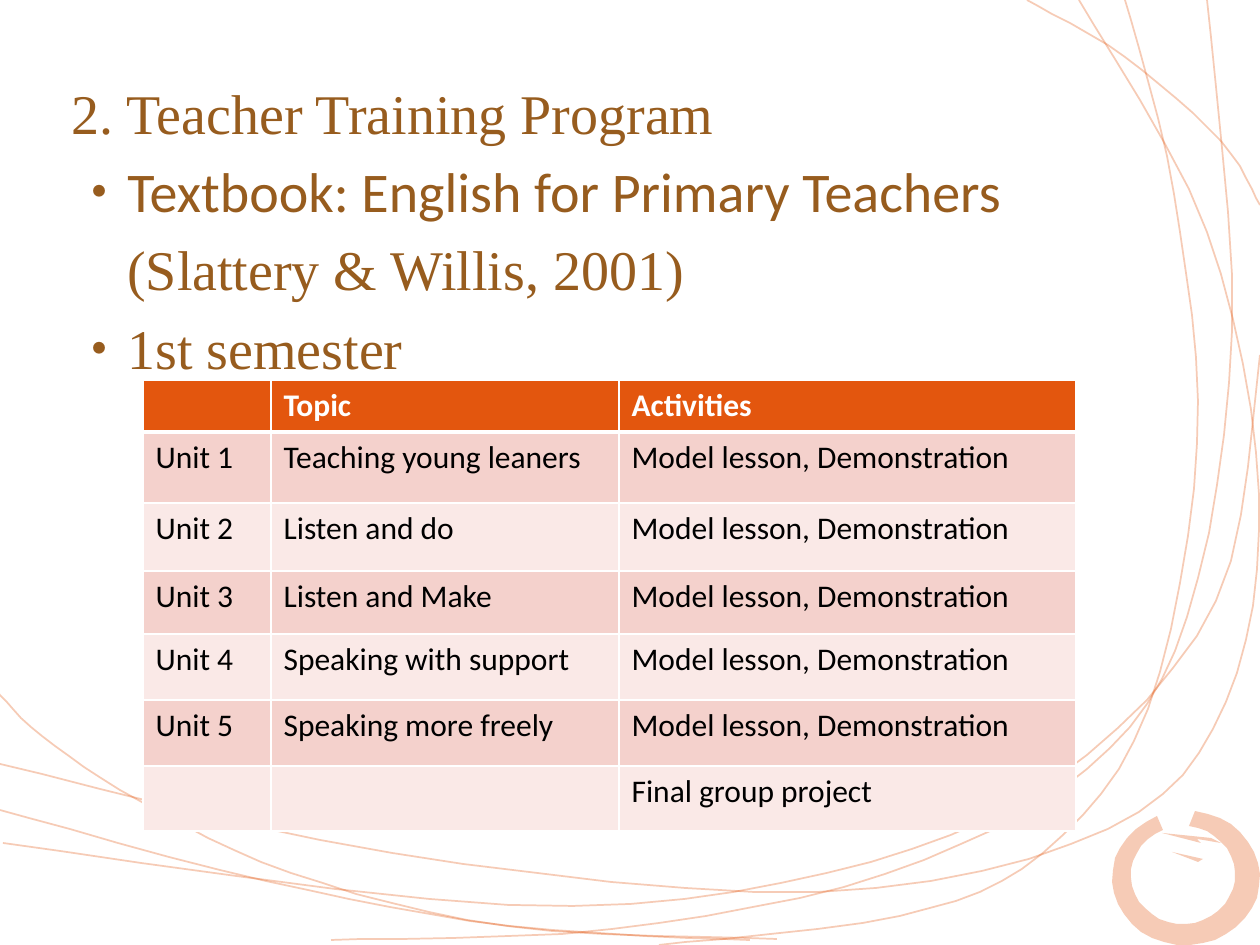
from math import cos, radians, sin

from lxml import etree
from pptx import Presentation
from pptx.dml.color import RGBColor
from pptx.oxml.ns import qn
from pptx.util import Emu, Pt

SCALE = 914400 / 126
COLORS = {
    "accent": "E3560E", "brown": "975C1E", "white": "FFFFFF", "black": "000000",
    "band_dark": "F4D1CC", "band_light": "FAE9E7",
}
CURVE_KNOTS = [
    [(-4, 690), (42, 736), (140, 801), (291, 873), (507, 926), (777, 939)],
    [(659, 945), (900, 916), (1043, 853), (1148, 709), (1197, 444), (1174, 194), (1125, 0)],
    [(0, 764), (392, 853), (818, 892), (1108, 829), (1226, 702), (1259, 493),
     (1207, 232), (1079, 0)],
    [(3, 843), (508, 905), (827, 873), (1055, 779), (1216, 601), (1260, 355)],
    [(331, 940), (612, 929), (885, 874), (1087, 769), (1187, 617), (1232, 331), (1207, 0)],
    [(1027, 0), (1125, 57), (1221, 141), (1260, 205)],
    [(0, 810), (266, 881), (510, 926), (750, 940)],
]
BRUSH_FLECKS = [
    [(1162, 833), (1211, 838), (1221, 843), (1197, 839), (1201, 843)],
    [(1172, 852), (1203, 859), (1198, 862)],
]
HEADING_LINES = [
    ("2. Teacher Training Program", "Times New Roman", 0),
    ("・Textbook: English for Primary Teachers", "Calibri", 0),
    ("(Slattery & Willis, 2001)", "Times New Roman", 56),
    ("・1st semester", "Times New Roman", 0),
]
LESSON = "Model lesson, Demonstration"
SYLLABUS = [
    ("", "Topic", "Activities"),
    ("Unit 1", "Teaching young leaners", LESSON),
    ("Unit 2", "Listen and do", LESSON),
    ("Unit 3", "Listen and Make", LESSON),
    ("Unit 4", "Speaking with support", LESSON),
    ("Unit 5", "Speaking more freely", LESSON),
    ("", "", "Final group project"),
]
COLUMN_WIDTHS = [128, 348, 457]
ROW_HEIGHTS = [52, 71, 68, 63, 66, 66, 65]


def px(length):
    return Emu(round(length * SCALE))


def color(name):
    return RGBColor.from_string(COLORS[name])


def set_alpha(fill_parent, percent):
    for color_element in fill_parent.iter(qn("a:srgbClr")):
        etree.SubElement(color_element, qn("a:alpha"), val=str(percent * 1000))


def smooth_points(knots, steps=6):
    """Pass a Catmull-Rom spline through the knots."""
    padded = [knots[0], *knots, knots[-1]]
    points = [knots[0]]
    for before, start, end, after in zip(padded, padded[1:], padded[2:], padded[3:]):
        for step in range(1, steps + 1):
            t = step / steps
            points.append(tuple(
                b + t * ((c - a) + t * ((2 * a - 5 * b + 4 * c - d)
                                        + t * (3 * b - a - 3 * c + d))) / 2
                for a, b, c, d in zip(before, start, end, after)))
    return points


def arc_points(center_x, center_y, radius_x, radius_y):
    """Trace an ellipse that stays open at the top left."""
    return [(center_x + radius_x * cos(radians(angle)),
             center_y + radius_y * sin(radians(angle)))
            for angle in range(-83, 248, 10)]


def add_outline(slide, points, close):
    builder = slide.shapes.build_freeform(*points[0], scale=SCALE)
    builder.add_line_segments(points[1:], close=close)
    shape = builder.convert_to_shape()
    shape.shadow.inherit = False
    return shape


def add_curve(slide, knots):
    shape = add_outline(slide, smooth_points(knots), close=False)
    shape.fill.background()
    shape.line.color.rgb = color("accent")
    shape.line.width = Pt(1)
    set_alpha(shape.line._ln, 29)


def add_brush_stroke(slide, points):
    shape = add_outline(slide, points, close=True)
    shape.line.fill.background()
    shape.fill.solid()
    shape.fill.fore_color.rgb = color("accent")
    set_alpha(shape._element.spPr, 30)


def add_run(paragraph, text, font_name, size, color_name, bold=False):
    run = paragraph.add_run()
    run.text = text
    run.font.name = font_name
    run.font.size = Pt(size)
    run.font.bold = bold
    run.font.color.rgb = color(color_name)


def add_heading(slide):
    frame = slide.shapes.add_textbox(px(59), px(72), px(1134), px(843)).text_frame
    frame.word_wrap = True
    for index, (text, font_name, indent) in enumerate(HEADING_LINES):
        paragraph = frame.add_paragraph() if index else frame.paragraphs[0]
        properties = paragraph._p.get_or_add_pPr()
        properties.set("marL", str(px(indent)))
        space_before = etree.SubElement(properties, qn("a:spcBef"))
        etree.SubElement(space_before, qn("a:spcPct"), val="20000")
        add_run(paragraph, text, font_name, 32, "brown")


def set_borders(cell, widths):
    """Draw white borders; widths maps an edge letter to points."""
    properties = cell._tc.get_or_add_tcPr()
    for position, (edge, width) in enumerate(widths.items()):
        line = etree.Element(qn(f"a:ln{edge}"), w=str(Pt(width)))
        fill = etree.SubElement(line, qn("a:solidFill"))
        etree.SubElement(fill, qn("a:srgbClr"), val=COLORS["white"])
        properties.insert(position, line)


def add_syllabus(slide):
    table = slide.shapes.add_table(
        len(ROW_HEIGHTS), len(COLUMN_WIDTHS), px(143), px(380),
        px(sum(COLUMN_WIDTHS)), px(sum(ROW_HEIGHTS))).table
    for column, width in zip(table.columns, COLUMN_WIDTHS):
        column.width = px(width)
    for index, (row, height, texts) in enumerate(zip(table.rows, ROW_HEIGHTS, SYLLABUS)):
        row.height = px(height)
        header = index == 0
        band = "accent" if header else "band_dark" if index % 2 else "band_light"
        for cell, text in zip(row.cells, texts):
            cell.fill.solid()
            cell.fill.fore_color.rgb = color(band)
            set_borders(cell, {"L": 1, "R": 1, "T": 3 if index == 1 else 1,
                               "B": 3 if header else 1})
            if text:
                add_run(cell.text_frame.paragraphs[0], text, "Calibri", 18,
                        "white" if header else "black", header)


def main():
    presentation = Presentation()
    presentation.slide_width, presentation.slide_height = px(1260), px(945)
    slide = presentation.slides.add_slide(presentation.slide_layouts[6])
    for knots in CURVE_KNOTS:
        add_curve(slide, knots)
    ring = arc_points(1186, 878, 74, 67) + arc_points(1183, 875, 52, 49)[::-1]
    for points in [ring, *BRUSH_FLECKS]:
        add_brush_stroke(slide, points)
    add_heading(slide)
    add_syllabus(slide)
    presentation.save("out.pptx")


if __name__ == "__main__":
    main()
